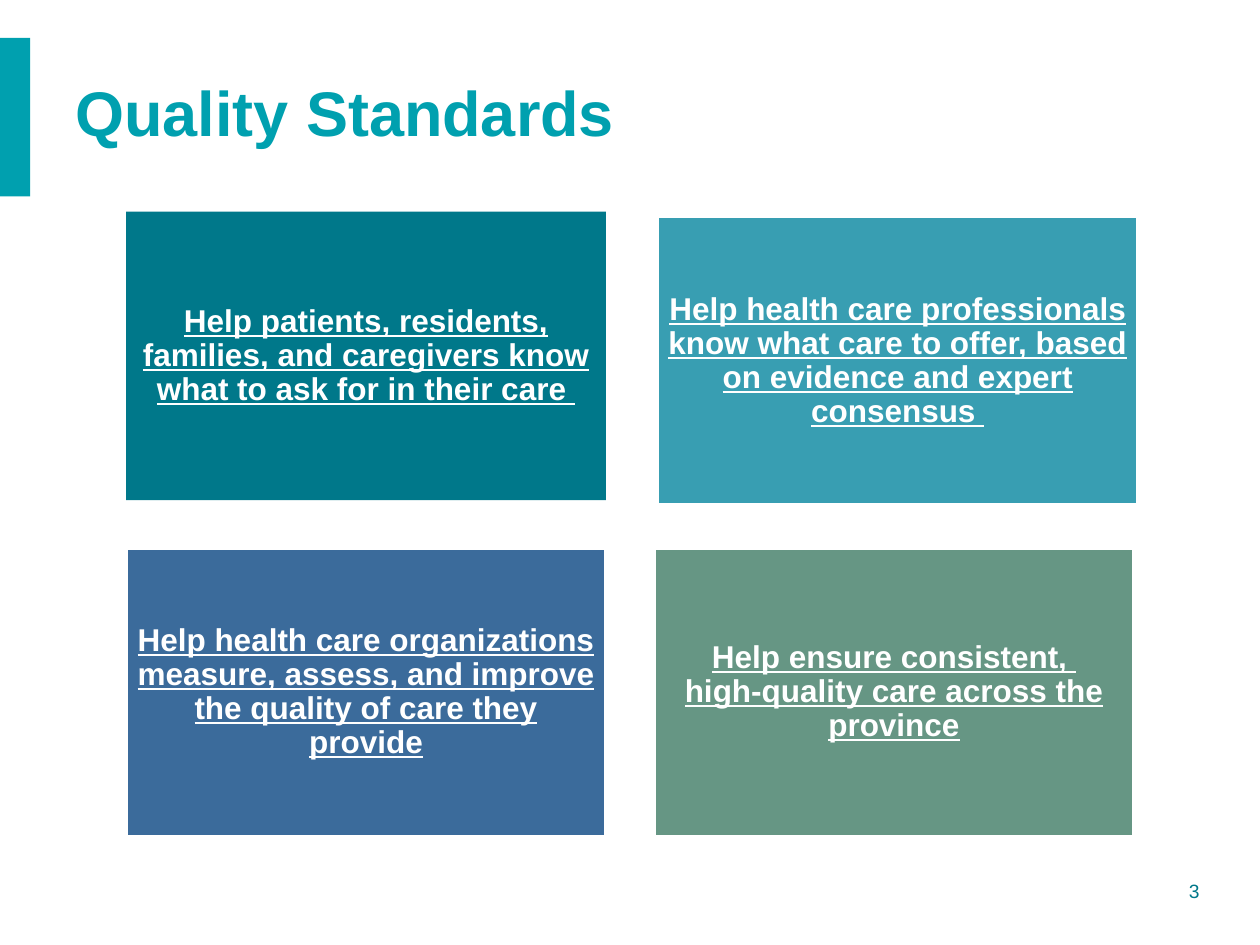
import pptx
import pptx.dml.color
import pptx.enum.shapes
import pptx.enum.text
import pptx.util
from dataclasses import dataclass
from typing import Optional

Inches = pptx.util.Inches
Align = pptx.enum.text.PP_ALIGN
Anchor = pptx.enum.text.MSO_ANCHOR


@dataclass(frozen=True)
class Theme:
    font: str = "Arial"
    accent: str = "00A0AF"
    deep_teal: str = "00788A"
    light_teal: str = "389EB2"
    blue: str = "3B6B9B"
    green: str = "669684"
    white: str = "FFFFFF"
    title_size: float = 36
    card_size: float = 18
    number_size: float = 11


@dataclass(frozen=True)
class Card:
    left: float
    top: float
    fill: str
    text: str
    outline: Optional[str] = None


THEME = Theme()
CARD_WIDTH, CARD_HEIGHT = 3.81, 2.29
CARDS = [
    Card(1, 1.68, THEME.deep_teal,
         "Help patients, residents, families, and caregivers know what to ask for in their care "),
    Card(5.22, 1.72, THEME.light_teal,
         "Help health care professionals know what care to offer, based on evidence and expert consensus ",
         THEME.white),
    Card(1, 4.35, THEME.blue,
         "Help health care organizations measure, assess, and improve the quality of care they provide",
         THEME.white),
    Card(5.19, 4.35, THEME.green,
         "Help ensure consistent, \nhigh-quality care across the province", THEME.white),
]


def color(value: str) -> pptx.dml.color.RGBColor:
    return pptx.dml.color.RGBColor.from_string(value)


def write_text(shape, text: str, *, size: float, ink: str, bold: bool = False,
               underline: bool = False, align=Align.LEFT, anchor=Anchor.TOP,
               inset: Optional[float] = None, line_spacing: float = 1.0,
               space_after: float = 0) -> None:
    frame = shape.text_frame
    frame.word_wrap = True
    frame.vertical_anchor = anchor
    if inset is not None:
        frame.margin_left = frame.margin_right = Inches(inset)
        frame.margin_top = frame.margin_bottom = Inches(inset)
    para = frame.paragraphs[0]
    para.text = text
    para.alignment = align
    para.line_spacing = line_spacing
    para.space_after = pptx.util.Pt(space_after)
    for span in para.runs:
        span.font.name = THEME.font
        span.font.size = pptx.util.Pt(size)
        span.font.bold = bold
        span.font.underline = underline
        span.font.color.rgb = color(ink)


def add_block(page, left: float, top: float, width: float, height: float,
              fill: str, outline: Optional[str] = None):
    block = page.shapes.add_shape(
        pptx.enum.shapes.MSO_SHAPE.RECTANGLE,
        Inches(left), Inches(top), Inches(width), Inches(height))
    block.shadow.inherit = False
    block.fill.solid()
    block.fill.fore_color.rgb = color(fill)
    if outline:
        block.line.color.rgb = color(outline)
        block.line.width = pptx.util.Pt(2)
    else:
        block.line.fill.background()
    return block


def add_card(page, card: Card) -> None:
    block = add_block(page, card.left, card.top, CARD_WIDTH, CARD_HEIGHT,
                      card.fill, card.outline)
    write_text(block, card.text, size=THEME.card_size, ink=THEME.white, bold=True,
               underline=True, align=Align.CENTER, anchor=Anchor.MIDDLE,
               inset=0.07, line_spacing=0.9, space_after=6.3)


def main() -> None:
    deck = pptx.Presentation()
    deck.slide_width, deck.slide_height = Inches(10), Inches(7.5)
    page = deck.slides.add_slide(deck.slide_layouts[6])

    number_box = page.shapes.add_textbox(Inches(8.45), Inches(6.93), Inches(1.17), Inches(0.29))
    write_text(number_box, "3", size=THEME.number_size, ink=THEME.deep_teal, align=Align.RIGHT)

    add_block(page, 0, 0.3, 0.24, 1.26, THEME.accent)
    title_box = page.shapes.add_textbox(Inches(0.5), Inches(0.5), Inches(7.81), Inches(0.77))
    write_text(title_box, "Quality Standards", size=THEME.title_size, ink=THEME.accent,
               bold=True, anchor=Anchor.MIDDLE)

    for card in CARDS:
        add_card(page, card)
    deck.save("out.pptx")


if __name__ == "__main__":
    main()
